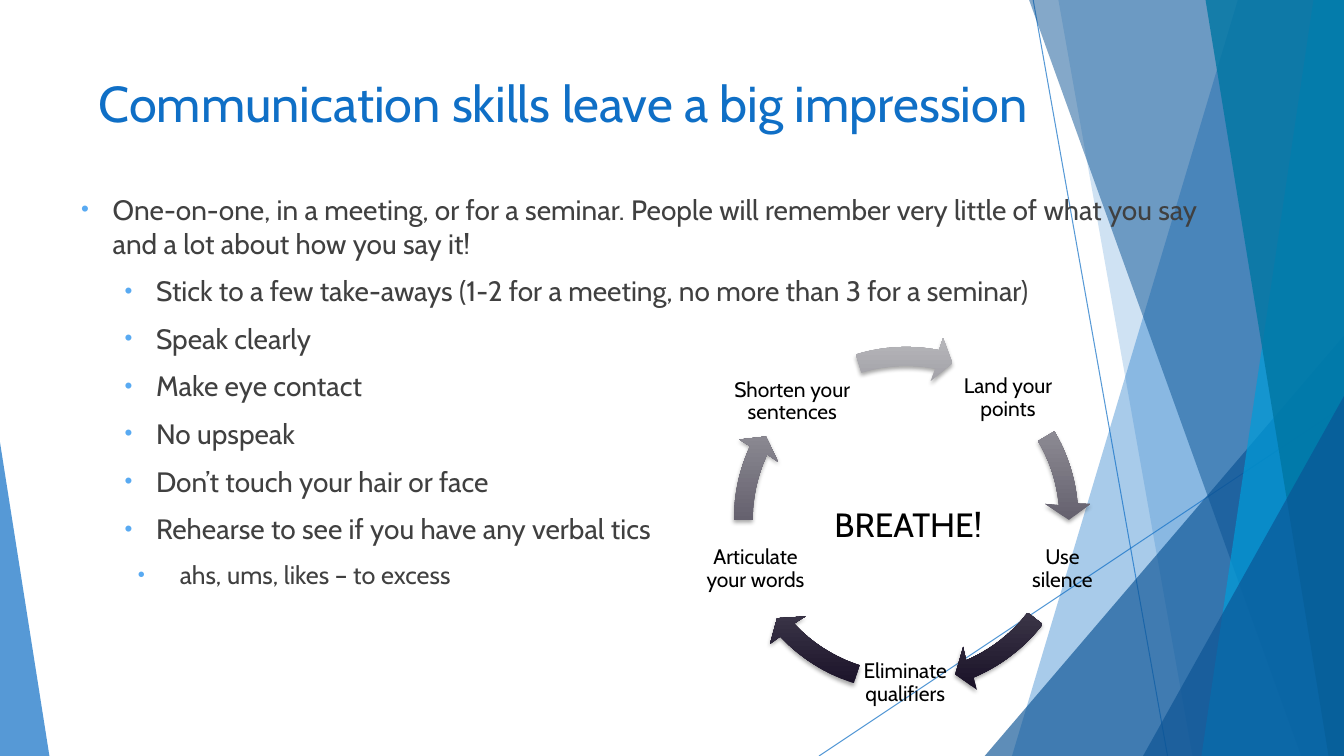
import math
import pptx
import pptx.dml.color
import pptx.enum.shapes
import pptx.enum.text
import pptx.oxml
import pptx.oxml.ns
import pptx.util

Pt = pptx.util.Pt
FONT = "Cabin"
COLORS = {
    "blue": "0F6FC6", "navy": "0B5394", "sky": "009DD9", "teal": "0076A3",
    "bullet": "59AAF2", "body": "404040", "black": "000000",
    "arrow_dark": "120A21", "arrow_light": "B8B8BC",
}
NAMESPACE = 'xmlns:a="http://schemas.openxmlformats.org/drawingml/2006/main"'
BULLETS = [
    (0, "One-on-one, in a meeting, or for a seminar. People will remember very "
        "little of what you say and a lot about how you say it!"),
    (1, "Stick to a few take-aways (1-2 for a meeting, no more than 3 for a seminar)"),
    (1, "Speak clearly"),
    (1, "Make eye contact"),
    (1, "No upspeak"),
    (1, "Don’t touch your hair or face"),
    (1, "Rehearse to see if you have any verbal tics"),
    (2, "ahs, ums, likes – to excess"),
]
# Per level: text margin, first-line indent, space before, font size
LEVELS = [(36, -22.5, 0, 20), (67, -22.5, 10, 20), (84, -30, 10, 18)]
# Label, centre relative to the wheel's centre, width, height
WHEEL_LABELS = [
    ("Land your points", 72.7, -86.4, 70.6, 70.6),
    ("Use silence", 111.6, 36, 70.6, 70.6),
    ("Eliminate qualifiers", -0.7, 117.4, 70.6, 70.6),
    ("Articulate your words", -107.6, 36, 80, 70.6),
    ("Shorten your sentences", -81.4, -83.9, 95, 48),
]
# Start of each arrow and base of its head, in degrees clockwise from the right
WHEEL_ARROWS = [(-30.6, -5.2), (37.6, 67), (107.7, 137), (179.7, 205), (253, 281)]


def rgb(value):
    return pptx.dml.color.RGBColor.from_string(value)


def set_alpha(properties, percent):
    color = properties.find(".//" + pptx.oxml.ns.qn("a:srgbClr"))
    color.append(pptx.oxml.parse_xml(f'<a:alpha {NAMESPACE} val="{percent * 1000}"/>'))


def format_frame(frame, margins, anchor):
    values = dict(zip(("margin_left", "margin_top", "margin_right", "margin_bottom"),
                      map(Pt, margins)))
    values.update(word_wrap=True, vertical_anchor=anchor,
                  auto_size=pptx.enum.text.MSO_AUTO_SIZE.NONE)
    for name, value in values.items():
        setattr(frame, name, value)


def write_text(paragraph, text, size, color, **formats):
    run = paragraph.add_run()
    run.text = text
    run.font.name, run.font.size = FONT, Pt(size)
    run.font.color.rgb = rgb(COLORS[color])
    for name, value in formats.items():
        setattr(paragraph, name, value)


def add_text_box(slide, box, margins=(7.2, 3.6, 7.2, 3.6), anchor="TOP"):
    shape = slide.shapes.add_textbox(*map(Pt, box))
    format_frame(shape.text_frame, margins,
                 getattr(pptx.enum.text.MSO_ANCHOR, anchor))
    return shape.text_frame


def add_polygon(slide, points):
    points = [(Pt(x), Pt(y)) for x, y in points]
    builder = slide.shapes.build_freeform(*points[0])
    builder.add_line_segments(points[1:], close=True)
    shape = builder.convert_to_shape()
    shape.line.fill.background()
    shape.shadow.inherit = False
    return shape


def add_facets(slide, box):
    left, top, width, height = box
    right, bottom = left + width, top + height

    # Thin crossing lines
    for x1, y1, x2, y2 in [(738, 0, 834, 540), (960, 290, 585, 540)]:
        line = slide.shapes.add_connector(
            pptx.enum.shapes.MSO_CONNECTOR.STRAIGHT,
            Pt(left + x1), Pt(top + y1), Pt(left + x2), Pt(top + y2))
        line.line.width = Pt(0.75)
        line.line.color.rgb = rgb(COLORS["blue"])
        properties = line._element.spPr
        set_alpha(properties, 70)
        properties.append(pptx.oxml.parse_xml(f"<a:effectLst {NAMESPACE}/>"))

    # Bands give the left edge at top and bottom; triangles a box and apex side
    facets = [
        ("band", (884.2, 722.9), "blue", 36),
        ("band", (756, 851.8), "blue", 20),
        ("triangle", (703.4, 239.8, 256.6, 1), "navy", 66),
        ("band", (735.1, 929.5), "navy", 50),
        ("band", (938.2, 858.2), "sky", 70),
        ("band", (861.1, 949), "teal", 80),
        ("triangle", (816.5, 283, 143.5, 1), "navy", 66),
        ("triangle", (0, 316, 35.3, 0), "blue", 70),
    ]
    for kind, numbers, color, alpha in facets:
        if kind == "band":
            upper, lower = numbers
            shape = add_polygon(slide, [(left + upper, top), (right, top),
                                        (right, bottom), (left + lower, bottom)])
        else:
            x, y, facet_width, apex = numbers
            shape = slide.shapes.add_shape(
                pptx.enum.shapes.MSO_SHAPE.ISOSCELES_TRIANGLE,
                Pt(left + x), Pt(top + y), Pt(facet_width), Pt(height - y))
            shape.adjustments[0] = apex
            shape.line.fill.background()
            shape.shadow.inherit = False
        shape.fill.solid()
        shape.fill.fore_color.rgb = rgb(COLORS[color])
        set_alpha(shape._element.spPr, alpha)


def add_title(slide, box):
    title = slide.shapes.title
    slide.shapes._spTree.append(title._element)  # in front of the facets
    for name, value in zip(("left", "top", "width", "height"), box):
        setattr(title, name, Pt(value))
    format_frame(title.text_frame, (7.2, 3.6, 7.2, 3.6),
                 pptx.enum.text.MSO_ANCHOR.MIDDLE)
    write_text(title.text_frame.paragraphs[0],
               "Communication skills leave a big impression", 36, "blue",
               alignment=pptx.enum.text.PP_ALIGN.LEFT)


def add_bullets(slide, box):
    frame = add_text_box(slide, box)
    for index, (level, text) in enumerate(BULLETS):
        paragraph = frame.add_paragraph() if index else frame.paragraphs[0]
        margin, indent, space, size = LEVELS[level]
        write_text(paragraph, text, size, "body", level=level, space_before=Pt(space))
        properties = paragraph._p.get_or_add_pPr()
        properties.set("marL", str(Pt(margin)))
        properties.set("indent", str(Pt(indent)))
        for xml in (f'<a:buClr {NAMESPACE}><a:srgbClr val="{COLORS["bullet"]}"/></a:buClr>',
                    f'<a:buSzPct {NAMESPACE} val="80000"/>',
                    f'<a:buFont {NAMESPACE} typeface="Arial"/>',
                    f'<a:buChar {NAMESPACE} char="•"/>'):
            properties.append(pptx.oxml.parse_xml(xml))


def arrow_color(share):
    """Mix from light at the wheel's top (0) to dark at its bottom (1)."""
    light, dark = rgb(COLORS["arrow_light"]), rgb(COLORS["arrow_dark"])
    return pptx.dml.color.RGBColor(
        *(round(a + (b - a) * min(max(share, 0), 1)) for a, b in zip(light, dark)))


def add_wheel(slide, box):
    left, top, width, height = box
    center_x, center_y = left + width / 2, top + height / 2
    outer, inner, head_outer, head_inner = 123, 109.5, 132, 100

    def at(radius, degrees):
        angle = math.radians(degrees)
        return center_x + radius * math.cos(angle), center_y + radius * math.sin(angle)

    # Curved arrows share one gradient running down the wheel
    for start, base in WHEEL_ARROWS:
        sweep = [start + (base - start) * step / 16 for step in range(17)]
        points = [at(outer, angle) for angle in sweep]
        points += [at(head_outer, base + 0.5), at((outer + inner) / 2, base + 5.5),
                   at(head_inner, base - 1)]
        points += [at(inner, angle) for angle in reversed(sweep)]
        arrow = add_polygon(slide, points)
        heights = [y for _, y in points]
        arrow.fill.gradient()
        arrow.fill.gradient_angle = 90
        for stop, y in zip(arrow.fill.gradient_stops, (max(heights), min(heights))):
            stop.color.rgb = arrow_color((y - top) / height)
        effects = arrow._element.spPr.find(pptx.oxml.ns.qn("a:effectLst"))
        effects.append(pptx.oxml.parse_xml(
            f'<a:outerShdw {NAMESPACE} blurRad="{Pt(3.1)}" dist="{Pt(1.8)}" dir="5400000" '
            f'rotWithShape="0"><a:srgbClr val="{COLORS["black"]}">'
            '<a:alpha val="35000"/></a:srgbClr></a:outerShdw>'))

    # Labels between the arrows
    for text, x, y, label_width, label_height in WHEEL_LABELS:
        frame = add_text_box(slide, (center_x + x - label_width / 2,
                                     center_y + y - label_height / 2,
                                     label_width, label_height), (1.5,) * 4, "MIDDLE")
        write_text(frame.paragraphs[0], text, 15, "black", line_spacing=0.9,
                   alignment=pptx.enum.text.PP_ALIGN.CENTER)

    # Message in the middle
    frame = add_text_box(slide, (center_x - 58.3, center_y - 14.4, 134.6, 36))
    write_text(frame.paragraphs[0], "BREATHE!", 24, "black")


def main():
    presentation = pptx.Presentation()
    presentation.slide_width, presentation.slide_height = Pt(960), Pt(540)
    slide = presentation.slides.add_slide(presentation.slide_layouts[5])
    add_facets(slide, (0, 0, 960, 540))
    add_title(slide, (63.4, 35.3, 832.3, 76.3))
    add_bullets(slide, (37.4, 133.9, 830.9, 324))
    add_wheel(slide, (514.8, 238.3, 265, 265))
    presentation.save("out.pptx")


if __name__ == "__main__":
    main()
